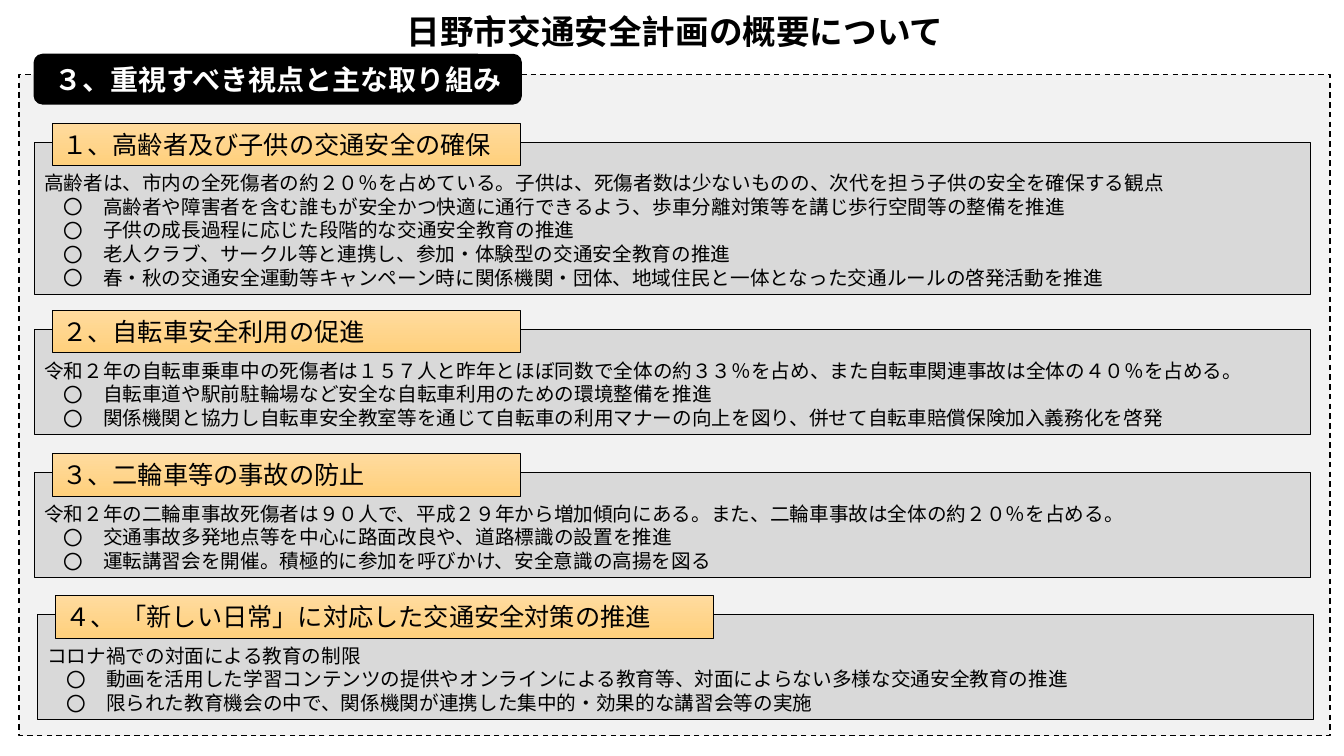
"""Build the slide on the key viewpoints of the Hino City traffic safety plan."""
from lxml.etree import SubElement
from pptx import Presentation
from pptx.dml.color import RGBColor
from pptx.enum.dml import MSO_LINE as Dash
from pptx.enum.shapes import MSO_SHAPE as Kind
from pptx.enum.text import MSO_ANCHOR as Anchor, MSO_AUTO_SIZE as Auto, PP_ALIGN as Align
from pptx.oxml.ns import qn
from pptx.util import Inches, Pt

TITLE = "日野市交通安全計画の概要について"
HEAD = "３、重視すべき視点と主な取り組み"
PARTS = [
    dict(left=0.34, top=1.41, wide=4.64, label="１、高齢者及び子供の交通安全の確保",
         lead="高齢者は、市内の全死傷者の約２０％を占めている。子供は、死傷者数は少ないものの、次代を担う子供の安全を確保する観点",
         items=["高齢者や障害者を含む誰もが安全かつ快適に通行できるよう、歩車分離対策等を講じ歩行空間等の整備を推進",
                "子供の成長過程に応じた段階的な交通安全教育の推進",
                "老人クラブ、サークル等と連携し、参加・体験型の交通安全教育の推進",
                "春・秋の交通安全運動等キャンペーン時に関係機関・団体、地域住民と一体となった交通ルールの啓発活動を推進"]),
    dict(left=0.34, top=3.27, wide=4.64, label="２、自転車安全利用の促進",
         lead="令和２年の自転車乗車中の死傷者は１５７人と昨年とほぼ同数で全体の約３３％を占め、また自転車関連事故は全体の４０％を占める。",
         items=["自転車道や駅前駐輪場など安全な自転車利用のための環境整備を推進",
                "関係機関と協力し自転車安全教室等を通じて自転車の利用マナーの向上を図り、併せて自転車賠償保険加入義務化を啓発"]),
    dict(left=0.34, top=4.69, wide=4.64, label="３、二輪車等の事故の防止",
         lead="令和２年の二輪車事故死傷者は９０人で、平成２９年から増加傾向にある。また、二輪車事故は全体の約２０％を占める。",
         items=["交通事故多発地点等を中心に路面改良や、道路標識の設置を推進",
                "運転講習会を開催。積極的に参加を呼びかけ、安全意識の高揚を図る"]),
    dict(left=0.37, top=6.1, wide=6.53, label="４、 「新しい日常」に対応した交通安全対策の推進",
         lead="コロナ禍での対面による教育の制限",
         items=["動画を活用した学習コンテンツの提供やオンラインによる教育等、対面によらない多様な交通安全教育の推進",
                "限られた教育機会の中で、関係機関が連携した集中的・効果的な講習会等の実施"]),
]
FONT = "Noto Sans CJK JP"
BLACK, WHITE, GREY, PALE = "000000", "FFFFFF", "D9D9D9", "F2F2F2"
AMBER = ("FFDB9E", "FFD07C")
SIZE = 14
PITCH = 16.9
ROW = PITCH / 72
PAD = 0.05


def rgb(code):
    return RGBColor.from_string(code)


def write(para, text, size=SIZE, color=BLACK, bold=False, align=Align.LEFT,
          space=None, mark=None):
    para.alignment = align
    if space:
        para.line_spacing = space
    if mark:
        props = para._p.get_or_add_pPr()
        props.set("marL", str(Pt(3 * size)))
        props.set("indent", str(-Pt(2 * size)))
        SubElement(props, qn("a:buFont")).set("typeface", FONT)
        SubElement(props, qn("a:buChar")).set("char", mark)
    run = para.add_run()
    run.text = text
    font = run.font
    font.size, font.bold, font.name = Pt(size), bold, FONT
    font.color.rgb = rgb(color)
    SubElement(run._r.get_or_add_rPr(), qn("a:ea")).set("typeface", FONT)


def block(slide, place, fill, line, kind=Kind.RECTANGLE, anchor=Anchor.MIDDLE):
    shape = slide.shapes.add_shape(kind, *map(Inches, place))
    shape.shadow.inherit = False
    if isinstance(fill, str):
        shape.fill.solid()
        shape.fill.fore_color.rgb = rgb(fill)
    else:
        shape.fill.gradient()
        shape.fill.gradient_angle = 270
        for stop, code in zip(shape.fill.gradient_stops, fill):
            stop.color.rgb = rgb(code)
    shape.line.color.rgb = rgb(BLACK)
    shape.line.width = Pt(line)
    frame = shape.text_frame
    frame.word_wrap = True
    frame.vertical_anchor = anchor
    return shape


def section(slide, left, top, wide, label, lead, items):
    high = (len(items) + 2) * ROW + 2 * PAD
    body = block(slide, (left, top, 12.66, high), GREY, 0.75, anchor=Anchor.TOP)
    frame = body.text_frame
    frame.margin_top = Inches(PAD + ROW)
    write(frame.paragraphs[0], lead, space=Pt(PITCH))
    for item in items:
        write(frame.add_paragraph(), item, space=Pt(PITCH), mark="〇")
    tab = block(slide, (left + 0.18, top - 0.19, wide, 0.42), AMBER, 0.5)
    write(tab.text_frame.paragraphs[0], label, size=18)


def main():
    deck = Presentation()
    deck.slide_width, deck.slide_height = Inches(13.33), Inches(7.5)
    slide = deck.slides.add_slide(deck.slide_layouts[5])

    title = slide.shapes.title
    title.left, title.top, title.width, title.height = map(Inches, (2.9, 0, 7.59, 0.53))
    frame = title.text_frame
    frame.auto_size, frame.word_wrap = Auto.NONE, True
    frame.vertical_anchor = Anchor.BOTTOM
    frame.margin_bottom = Inches(0.02)
    write(frame.paragraphs[0], TITLE, size=24, bold=True, align=Align.CENTER, space=0.9)

    panel = block(slide, (0.19, 0.74, 13, 6.56), PALE, 1)
    panel.line.dash_style = Dash.DASH
    head = block(slide, (0.34, 0.54, 4.83, 0.49), BLACK, 1, Kind.ROUNDED_RECTANGLE)
    write(head.text_frame.paragraphs[0], HEAD, size=20, color=WHITE, bold=True,
          align=Align.CENTER)
    for part in PARTS:
        section(slide, **part)
    deck.save("out.pptx")


if __name__ == "__main__":
    main()
